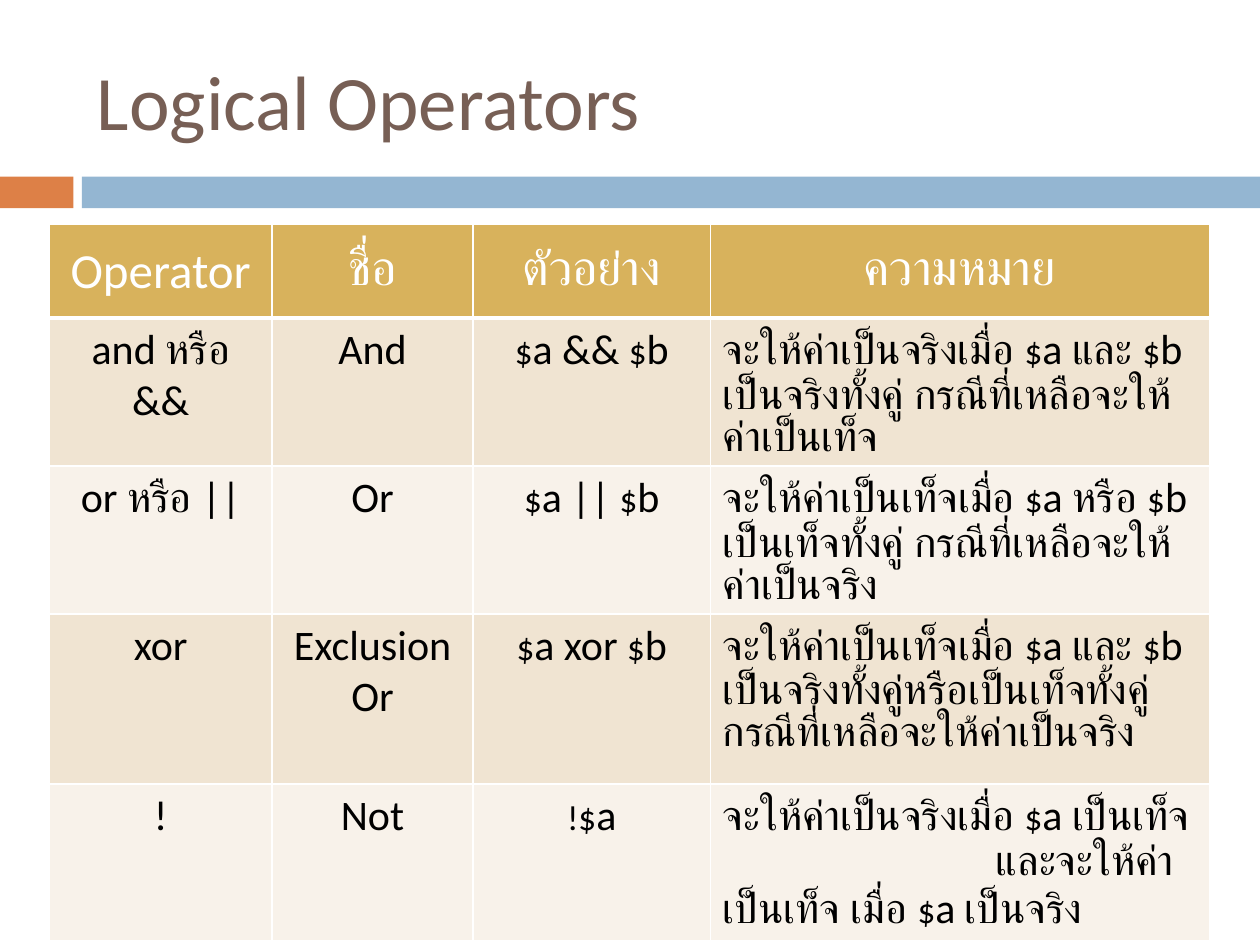
from lxml import etree
from pptx import Presentation
from pptx.dml.color import RGBColor
from pptx.enum.shapes import MSO_SHAPE
from pptx.enum.text import MSO_ANCHOR, PP_ALIGN
from pptx.oxml.ns import qn
from pptx.util import Cm, Pt

RECTANGLE = MSO_SHAPE.RECTANGLE
MIDDLE, TOP = MSO_ANCHOR.MIDDLE, MSO_ANCHOR.TOP
LEFT, CENTER = PP_ALIGN.LEFT, PP_ALIGN.CENTER
TITLE_ONLY = 5

COLUMN_WIDTHS = [4.48, 4.06, 4.78, 10.06]
ROW_HEIGHTS = [1.88, 2.36, 2.36, 3.43, 2.36]
ROWS = [
    ["Operator", "ชื่อ", "ตัวอย่าง", "ความหมาย"],
    ["and หรือ &&", "And", "$a && $b",
     "จะให้ค่าเป็นจริงเมื่อ $a และ $b เป็นจริงทั้งคู่ กรณีที่เหลือจะให้ค่าเป็นเท็จ"],
    ["or หรือ ||", "Or", "$a || $b",
     "จะให้ค่าเป็นเท็จเมื่อ $a หรือ $b เป็นเท็จทั้งคู่ กรณีที่เหลือจะให้ค่าเป็นจริง"],
    ["xor", "Exclusion Or", "$a xor $b",
     "จะให้ค่าเป็นเท็จเมื่อ $a และ $b เป็นจริงทั้งคู่หรือเป็นเท็จทั้งคู่ กรณีที่เหลือจะให้ค่าเป็นจริง"],
    ["!", "Not", "!$a",
     "จะให้ค่าเป็นจริงเมื่อ $a เป็นเท็จ\nและจะให้ค่าเป็นเท็จ เมื่อ $a เป็นจริง"],
]


def color(value):
    """Return the colour for a hex string."""
    return RGBColor.from_string(value)


class SlideBuilder:
    """Hold the style and the current slide."""

    font = "Calibri"
    title_color = "775F55"
    header_fill = "D8B25C"
    band_fills = ["F8F2EA", "F0E4D2"]
    border_color = "FFFFFF"
    header_size, body_size, sign_size = 28, 24, 20
    continuation_indent = 5.5

    def __init__(self, deck):
        """Add a title-only slide to the deck."""
        self.page = deck.slides.add_slide(deck.slide_layouts[TITLE_ONLY])

    def format_span(self, span, size, hue):
        """Set the font of a run."""
        span.font.name = self.font
        span.font.size = Pt(size)
        span.font.bold = False
        span.font.color.rgb = color(hue)

    def title(self, text, left, top, width, height):
        """Place and format the title placeholder."""
        box = self.page.shapes.title
        box.left, box.top, box.width, box.height = map(Cm, (left, top, width, height))
        frame = box.text_frame
        frame.text = text
        frame.vertical_anchor = MIDDLE
        frame.paragraphs[0].alignment = LEFT
        self.format_span(frame.paragraphs[0].runs[0], 44, self.title_color)

    def bar(self, left, top, width, height, fill):
        """Draw a plain filled bar."""
        box = self.page.shapes.add_shape(RECTANGLE, *map(Cm, (left, top, width, height)))
        box.shadow.inherit = False
        box.fill.solid()
        box.fill.fore_color.rgb = color(fill)
        box.line.fill.background()

    def borders(self, cell, top, bottom):
        """Draw the four borders of a cell."""
        properties = cell._tc.get_or_add_tcPr()
        for side, width in (("L", 1), ("R", 1), ("T", top), ("B", bottom)):
            line = etree.SubElement(properties, qn(f"a:ln{side}"), w=str(Pt(width)))
            fill = etree.SubElement(line, qn("a:solidFill"))
            etree.SubElement(fill, qn("a:srgbClr"), val=self.border_color)

    def body_text(self, para, text):
        """Write a paragraph with its variable signs in the smaller size."""
        sign = "!$" if "!$" in text else "$"
        for index, piece in enumerate(text.split(sign)):
            parts = [(sign, self.sign_size)] if index else []
            parts.append((piece, self.body_size))
            for part, size in parts:
                if part:
                    span = para.add_run()
                    span.text = part
                    self.format_span(span, size, "000000")

    def cell(self, cell, text, row, alignment):
        """Fill and format one table cell."""
        header = row == 0
        self.borders(cell, 3 if row == 1 else 1, 3 if header else 1)
        cell.fill.solid()
        cell.fill.fore_color.rgb = color(self.header_fill if header else self.band_fills[row % 2])
        cell.vertical_anchor = MIDDLE if header else TOP
        frame = cell.text_frame
        for index, line in enumerate(text.split("\n")):
            para = frame.add_paragraph() if index else frame.paragraphs[0]
            para.alignment = alignment
            if header:
                para.text = line
                self.format_span(para.runs[0], self.header_size, "FFFFFF")
            else:
                self.body_text(para, line)
            if index:
                para._p.get_or_add_pPr().set("indent", str(Cm(self.continuation_indent)))

    def table(self, rows, left, top, widths, heights):
        """Add the table with its column widths and row heights."""
        frame = self.page.shapes.add_table(
            len(rows), len(widths), Cm(left), Cm(top), Cm(sum(widths)), Cm(sum(heights)))
        table = frame.table
        table.first_row = table.horz_banding = False
        for column, width in zip(table.columns, widths):
            column.width = Cm(width)
        for row, (texts, height) in enumerate(zip(rows, heights)):
            table.rows[row].height = Cm(height)
            for column, text in enumerate(texts):
                meaning = row > 0 and column == len(widths) - 1
                self.cell(table.cell(row, column), text, row, LEFT if meaning else CENTER)


def main():
    """Build and save the slide."""
    deck = Presentation()
    deck.slide_width, deck.slide_height = Cm(25.4), Cm(19.05)
    slide = SlideBuilder(deck)
    slide.bar(0, 3.56, 1.48, 0.64, "DD8047")
    slide.bar(1.65, 3.56, 23.75, 0.64, "94B6D2")
    slide.title("Logical Operators", 1.7, 0.64, 22.66, 2.74)
    slide.table(ROWS, 1, 4.53, COLUMN_WIDTHS, ROW_HEIGHTS)
    deck.save("out.pptx")


if __name__ == "__main__":
    main()
